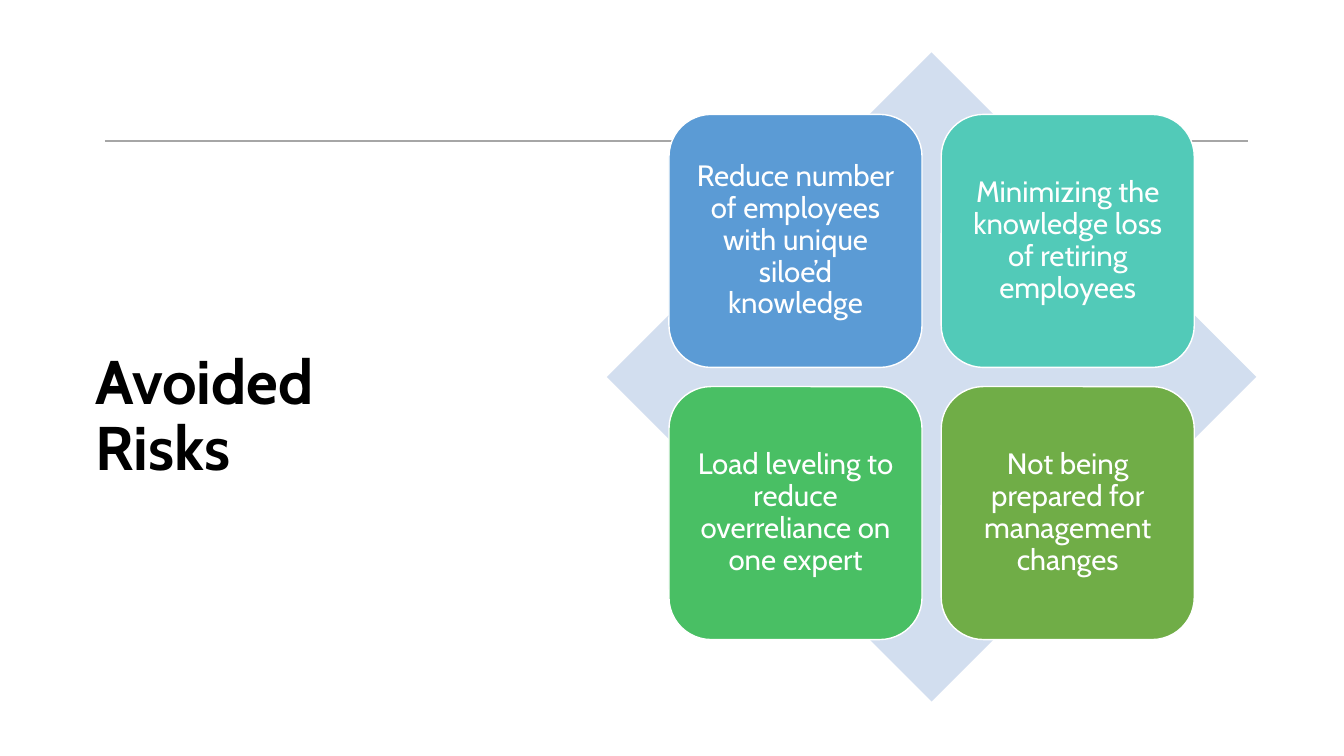
from lxml import etree
from pptx import Presentation
from pptx.dml.color import RGBColor
from pptx.enum.shapes import MSO_CONNECTOR, MSO_SHAPE
from pptx.enum.text import MSO_ANCHOR, MSO_AUTO_SIZE, PP_ALIGN
from pptx.oxml.ns import qn
from pptx.util import Pt

PX = 9144  # EMU per px, 100 px to the inch
FONT = "Cabin"
TITLE_ONLY = 5
STRAIGHT = MSO_CONNECTOR.STRAIGHT
DIAMOND = MSO_SHAPE.DIAMOND
ROUNDED = MSO_SHAPE.ROUNDED_RECTANGLE
MIDDLE = MSO_ANCHOR.MIDDLE
LEFT, CENTER = PP_ALIGN.LEFT, PP_ALIGN.CENTER

RISKS = [
    ("Reduce number of employees with unique siloe’d knowledge", "5B9BD5"),
    ("Minimizing the knowledge loss of retiring employees", "52CAB8"),
    ("Load leveling to reduce overreliance on one expert", "49BF64"),
    ("Not being prepared for management changes", "70AD47"),
]


def px(*lengths):
    return [round(length * PX) for length in lengths]


def paint(color_format, color):
    color_format.rgb = RGBColor.from_string(color)


def write(shape, text, size, color, bold=False, align=CENTER, inset=9):
    frame = shape.text_frame
    frame.text = text
    frame.word_wrap = True
    frame.auto_size = MSO_AUTO_SIZE.NONE
    frame.vertical_anchor = MIDDLE
    frame.margin_left, frame.margin_right = px(inset, inset)
    frame.margin_top, frame.margin_bottom = px(inset, inset)
    para = frame.paragraphs[0]
    para.alignment = align
    para.line_spacing = 0.9
    font = para.runs[0].font
    font.name, font.size, font.bold = FONT, Pt(size), bold
    paint(font.color, color)


def add_filled(page, kind, box, fill, outline=None):
    shape = page.shapes.add_shape(kind, *px(*box))
    shape.shadow.inherit = False
    shape.fill.solid()
    paint(shape.fill.fore_color, fill)
    if outline:
        paint(shape.line.color, outline)
        shape.line.width = Pt(1)
    else:
        shape.line.fill.background()
    return shape


def add_rule(page, left, top, width):
    rule = page.shapes.add_connector(STRAIGHT, *px(left, top, left + width, top))
    paint(rule.line.color, "A6A6A6")
    rule.line.width = Pt(1)
    etree.SubElement(rule._element.spPr, qn("a:effectLst"))


def add_title(page, box, text):
    title = page.shapes.title
    title.left, title.top, title.width, title.height = px(*box)
    write(title, text, 44, "000000", bold=True, align=LEFT, inset=10)


def add_risk_matrix(page, left, top, side):
    """Place two by two tiles centred on a square diamond."""
    add_filled(page, DIAMOND, (left, top, side, side), "D2DEEF")
    tile, gap = 251, 19
    margin = (side - 2 * tile - gap) / 2
    for index, (text, fill) in enumerate(RISKS):
        row, column = divmod(index, 2)
        box = (left + margin + column * (tile + gap),
               top + margin + row * (tile + gap), tile, tile)
        write(add_filled(page, ROUNDED, box, fill, "FFFFFF"), text, 21, "FFFFFF")


def main():
    deck = Presentation()
    deck.slide_width, deck.slide_height = px(1333, 750)
    page = deck.slides.add_slide(deck.slide_layouts[TITLE_ONLY])
    add_rule(page, 104, 140, 1134)
    add_title(page, (85, 152, 374, 524), "Avoided Risks")
    add_risk_matrix(page, 602, 52, 644)
    deck.save("out.pptx")


if __name__ == "__main__":
    main()
